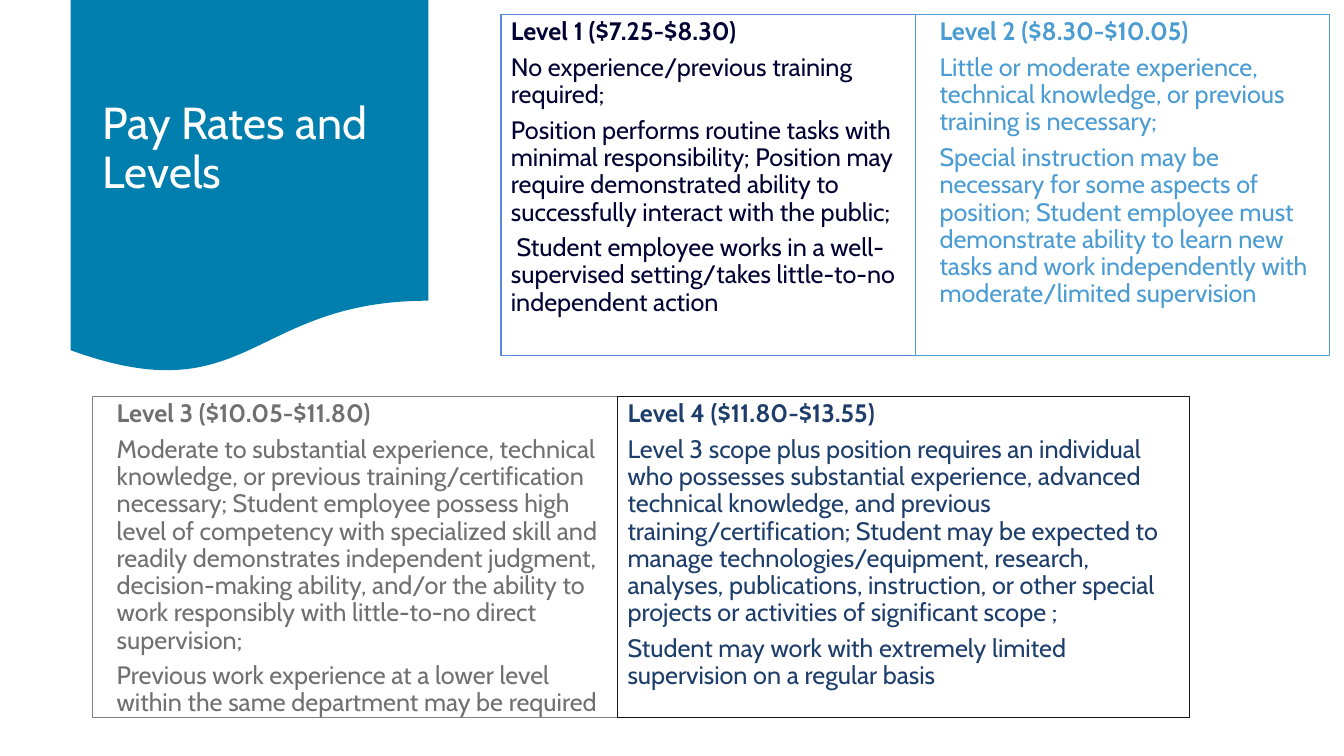
from dataclasses import dataclass

from pptx import Presentation
from pptx.dml.color import RGBColor
from pptx.enum.shapes import MSO_SHAPE as Shape
from pptx.enum.text import MSO_ANCHOR as Anchor, PP_ALIGN as Align
from pptx.util import Inches, Pt

SLIDE_WIDTH, SLIDE_HEIGHT = Inches(13.33), Inches(7.5)
FONT = "Cabin"
WHITE = RGBColor(0xFF, 0xFF, 0xFF)
TEAL = RGBColor(0x00, 0x7F, 0xAE)
NAVY = RGBColor(0x00, 0x00, 0x33)
PERIWINKLE = RGBColor(0x59, 0x8A, 0xD5)
SKY = RGBColor(0x4B, 0x9C, 0xD3)
GRAY = RGBColor(0x80, 0x80, 0x80)
DARK_GRAY = RGBColor(0x70, 0x70, 0x70)
BLACK = RGBColor(0x16, 0x16, 0x16)
DEEP_BLUE = RGBColor(0x1D, 0x3D, 0x6B)


@dataclass
class Level:
    """One pay level: its heading, duties, colours, width in percent and indent."""
    heading: str
    duties: list
    ink: RGBColor
    border: RGBColor
    width: float
    indent: float = 0


UPPER_LEVELS = [
    Level("Level 1 ($7.25-$8.30)", [
        "No experience/previous training required;",
        "Position performs routine tasks with minimal responsibility; Position may "
        "require demonstrated ability to successfully interact with the public;",
        " Student employee works in a well-supervised setting/takes little-to-no "
        "independent action",
    ], NAVY, PERIWINKLE, 30.84),
    Level("Level 2 ($8.30-$10.05)", [
        "Little or moderate experience, technical knowledge, or previous training "
        "is necessary;",
        "Special instruction may be necessary for some aspects of position; Student "
        "employee must demonstrate ability to learn new tasks and work independently "
        "with moderate/limited supervision",
    ], SKY, SKY, 30.84, 0.14),
]
LOWER_LEVELS = [
    Level("Level 3 ($10.05-$11.80)", [
        "Moderate to substantial experience, technical knowledge, or previous "
        "training/certification necessary; Student employee possess high level of "
        "competency with specialized skill and readily demonstrates independent "
        "judgment, decision-making ability, and/or the ability to work responsibly "
        "with little-to-no direct supervision;",
        "Previous work experience at a lower level within the same department may "
        "be required",
    ], DARK_GRAY, GRAY, 39.05, 0.14),
    Level("Level 4 ($11.80-$13.55)", [
        "Level 3 scope plus position requires an individual who possesses substantial "
        "experience, advanced technical knowledge, and previous "
        "training/certification; Student may be expected to manage "
        "technologies/equipment, research, analyses, publications, instruction, or "
        "other special projects or activities of significant scope ;",
        "Student may work with extremely limited supervision on a regular basis",
    ], DEEP_BLUE, BLACK, 42.54),
]


def area(left, top, width, height):
    """Turn percentages of the slide into a position and size."""
    return (round(SLIDE_WIDTH * left / 100), round(SLIDE_HEIGHT * top / 100),
            round(SLIDE_WIDTH * width / 100), round(SLIDE_HEIGHT * height / 100))


def write(frame, lines, size, ink, anchor, indent=0):
    """Fill a text frame with evenly spaced, left-aligned paragraphs."""
    frame.word_wrap = True
    frame.vertical_anchor = anchor
    frame.text = "\n".join(lines)
    for paragraph in frame.paragraphs:
        properties = paragraph._p.get_or_add_pPr()
        properties.set("marL", str(Inches(indent)))
        properties.set("indent", "0")
        paragraph.alignment = Align.LEFT
        paragraph.line_spacing = 0.9
        paragraph.space_after = Pt(6)
        for run in paragraph.runs:
            run.font.name = FONT
            run.font.size = Pt(size)
            run.font.color.rgb = ink


def add_banner(slide, title):
    """Draw the wavy banner and the slide title on it."""
    banner = slide.shapes.add_shape(Shape.FLOWCHART_DOCUMENT, *area(5.25, 0, 26.63, 49.6))
    banner.shadow.inherit = False
    banner.fill.solid()
    banner.fill.fore_color.rgb = TEAL
    banner.line.fill.background()
    heading = slide.shapes.add_textbox(*area(6.9, 2.53, 23.33, 34.53))
    write(heading.text_frame, [title], 32, WHITE, Anchor.MIDDLE)


def add_level(slide, level, place):
    """Draw one outlined pay level with a bold heading."""
    panel = slide.shapes.add_shape(Shape.RECTANGLE, *place)
    panel.shadow.inherit = False
    panel.fill.background()
    panel.line.color.rgb = level.border
    panel.line.width = Pt(0.75)
    write(panel.text_frame, [level.heading, *level.duties], 18, level.ink,
          Anchor.TOP, level.indent)
    panel.text_frame.paragraphs[0].runs[0].font.bold = True


def add_level_row(slide, levels, left, top, height):
    """Set pay levels side by side, each touching the one before."""
    for level in levels:
        add_level(slide, level, area(left, top, level.width, height))
        left += level.width


def main():
    """Build and save the pay rates slide."""
    deck = Presentation()
    deck.slide_width, deck.slide_height = SLIDE_WIDTH, SLIDE_HEIGHT
    slide = deck.slides.add_slide(deck.slide_layouts[6])
    add_banner(slide, "Pay Rates and Levels")
    add_level_row(slide, UPPER_LEVELS, 37.28, 1.87, 45.2)
    add_level_row(slide, LOWER_LEVELS, 6.9, 52.4, 42.53)
    deck.save("out.pptx")


if __name__ == "__main__":
    main()
